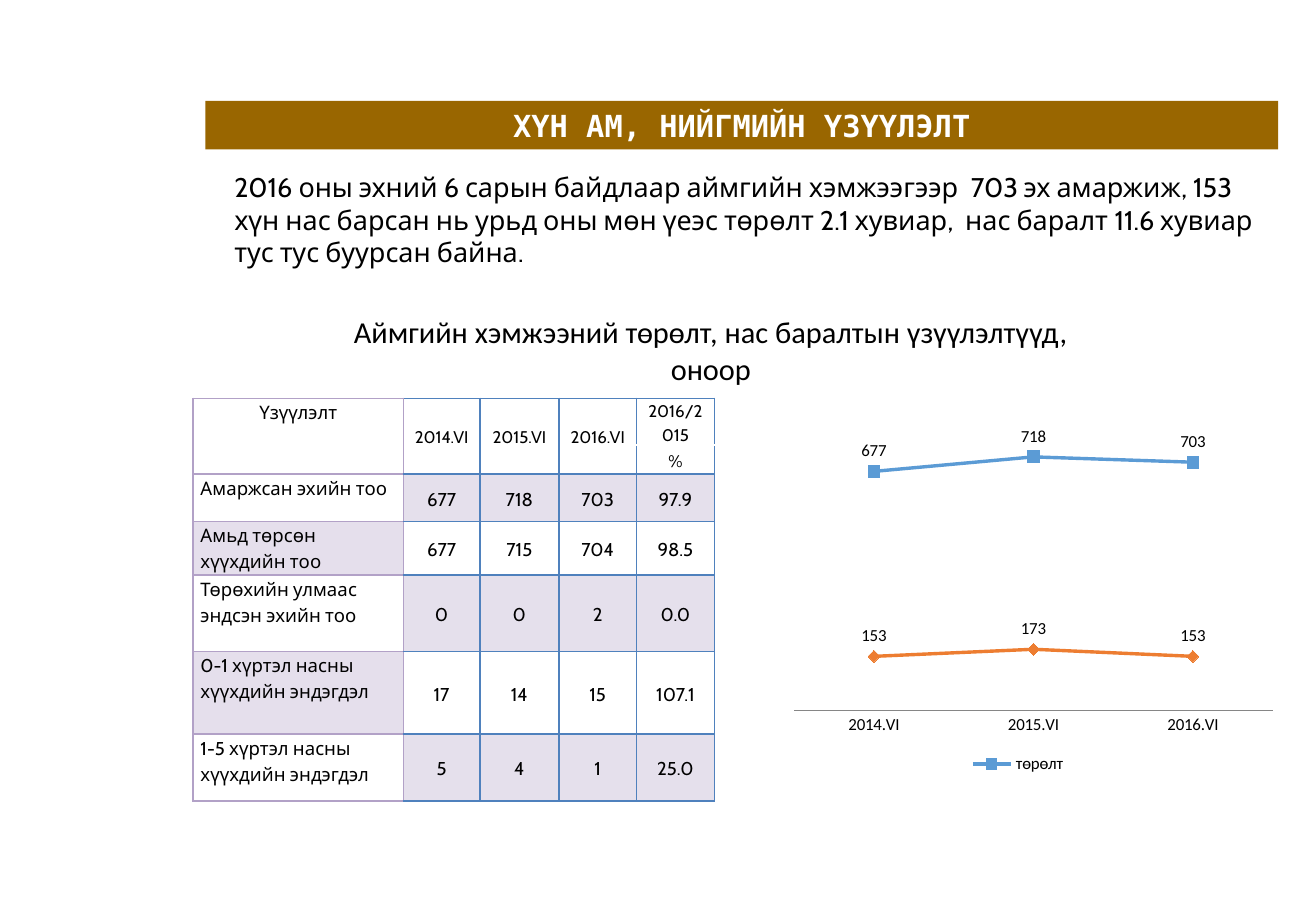
import dataclasses

import lxml.etree
import pptx
import pptx.chart.data
import pptx.dml.color
import pptx.enum.chart
import pptx.enum.text
import pptx.oxml
import pptx.oxml.ns
import pptx.util

Pt = pptx.util.Pt
ALIGN = pptx.enum.text.PP_ALIGN
ANCHOR = pptx.enum.text.MSO_ANCHOR
MARKER = pptx.enum.chart.XL_MARKER_STYLE
qn = pptx.oxml.ns.qn

PAGE_WIDTH = pptx.util.Inches(10.83)
PAGE_HEIGHT = pptx.util.Inches(7.5)
COLOURS = {
    "banner": "996600", "white": "FFFFFF", "text": "000000",
    "blue rule": "4F81BD", "purple rule": "B2A1C7",
    "label band": "E5DFEC", "value band": "E5E0EC",
    "births": "5B9BD5", "deaths": "ED7D31", "axis": "868686",
}


@dataclasses.dataclass(frozen=True)
class Area:
    """A rectangle in percent of the slide's width and height."""
    left: float
    top: float
    width: float
    height: float

    def frame(self) -> tuple:
        return (across(self.left), down(self.top), across(self.width), down(self.height))


@dataclasses.dataclass(frozen=True)
class Style:
    size: float
    font: str = "Cabin"
    colour: str = "text"
    bold: bool = False
    align: ALIGN = ALIGN.LEFT
    spacing: float = 1.0


@dataclasses.dataclass(frozen=True)
class Trend:
    name: str
    values: tuple
    colour: str
    marker: MARKER
    marker_size: int


TITLE_AREA = Area(15.6, 11.07, 81.53, 5.33)
SUMMARY_AREA = Area(16.9, 18, 80.15, 12.13)
CAPTION_AREA = Area(25.95, 33.73, 56.14, 9.47)
TABLE_AREA = Area(14.68, 43.73, 39.61, 44)
CHART_AREA = Area(59.19, 44.4, 38.69, 43.07)

TITLE = "ХҮН АМ, НИЙГМИЙН ҮЗҮҮЛЭЛТ"
SUMMARY = ("2016 оны эхний 6 сарын байдлаар аймгийн хэмжээгээр  703 эх амаржиж, 153 хүн нас "
           "барсан нь урьд оны мөн үеэс төрөлт 2.1 хувиар,  нас баралт 11.6 хувиар "
           "тус тус буурсан байна.")
CAPTION = "Аймгийн хэмжээний төрөлт, нас баралтын үзүүлэлтүүд, оноор"
PERIODS = ("2014.VI", "2015.VI", "2016.VI")
HEADER_ROWS = 2
TABLE_COLUMNS = (15.97, 5.82, 6, 5.91, 5.91)
TABLE_ROWS = (4.93, 3.2, 5.2, 5.87, 8.4, 9.07, 7.33)
TABLE_CELLS = (
    ("Үзүүлэлт", *PERIODS, "2016/2015"),
    ("", "", "", "", "%"),
    ("Амаржсан эхийн тоо", "677", "718", "703", "97.9"),
    ("Амьд төрсөн хүүхдийн тоо", "677", "715", "704", "98.5"),
    ("Төрөхийн улмаас эндсэн эхийн тоо", "0", "0", "2", "0.0"),
    ("0-1 хүртэл насны хүүхдийн эндэгдэл", "17", "14", "15", "107.1"),
    ("1-5 хүртэл насны хүүхдийн эндэгдэл", "5", "4", "1", "25.0"),
)
TRENDS = (
    Trend("төрөлт", (677, 718, 703), "births", MARKER.SQUARE, 7),
    Trend("нас баралт", (153, 173, 153), "deaths", MARKER.DIAMOND, 7),
)


def across(percent: float) -> int:
    return round(PAGE_WIDTH * percent / 100)


def down(percent: float) -> int:
    return round(PAGE_HEIGHT * percent / 100)


def apply(target, **values) -> None:
    for name, value in values.items():
        setattr(target, name, value)


def colour(name: str) -> pptx.dml.color.RGBColor:
    return pptx.dml.color.RGBColor.from_string(COLOURS[name])


def paint(fill, name: str) -> None:
    fill.solid()
    fill.fore_color.rgb = colour(name)


def write(frame, text: str, style: Style) -> None:
    para = frame.paragraphs[0]
    apply(para, alignment=style.align, line_spacing=style.spacing)
    span = para.add_run()
    span.text = text
    apply(span.font, size=Pt(style.size), name=style.font, bold=style.bold)
    span.font.color.rgb = colour(style.colour)


def add_title(page) -> None:
    banner = page.shapes.title
    left, top, width, height = TITLE_AREA.frame()
    apply(banner, left=left, top=top, width=width, height=height)
    paint(banner.fill, "banner")
    apply(banner.text_frame, word_wrap=True, vertical_anchor=ANCHOR.MIDDLE,
          auto_size=pptx.enum.text.MSO_AUTO_SIZE.NONE)
    write(banner.text_frame, TITLE, Style(18, "DejaVu Sans Mono", "white", True, ALIGN.CENTER))


def add_text(page, area: Area, text: str, style: Style, anchor: ANCHOR) -> None:
    frame = page.shapes.add_textbox(*area.frame()).text_frame
    apply(frame, word_wrap=True, vertical_anchor=anchor)
    write(frame, text, style)


def rule_cell(cell, row: int, column: int) -> None:
    """Draw the four borders of a table cell."""
    base = "purple rule" if column == 0 else "blue rule"
    last_column = len(TABLE_COLUMNS) - 1
    heavy = 1.5 if column else 1
    borders = {
        "L": ("purple rule" if column == 1 else base, 1),
        "R": (base, 1),
        "T": (base, heavy if row == HEADER_ROWS else 1),
        "B": (base, heavy if row < HEADER_ROWS else 1),
    }
    if column == last_column and row < HEADER_ROWS:
        del borders["B" if row == 0 else "T"]
    properties = cell._tc.get_or_add_tcPr()
    for index, (side, (name, width)) in enumerate(borders.items()):
        line = lxml.etree.Element(qn(f"a:ln{side}"), w=str(Pt(width)))
        solid = lxml.etree.SubElement(line, qn("a:solidFill"))
        lxml.etree.SubElement(solid, qn("a:srgbClr"), val=COLOURS[name])
        properties.insert(index, line)


def add_indicator_table(page) -> None:
    table = page.shapes.add_table(len(TABLE_ROWS), len(TABLE_COLUMNS), *TABLE_AREA.frame()).table
    apply(table, first_row=False, horz_banding=False)
    for column, share in zip(table.columns, TABLE_COLUMNS):
        column.width = across(share)
    for row, share in zip(table.rows, TABLE_ROWS):
        row.height = down(share)
    for column in range(len(TABLE_COLUMNS) - 1):
        table.cell(0, column).merge(table.cell(1, column))

    for row, texts in enumerate(TABLE_CELLS):
        for column, text in enumerate(texts):
            cell = table.cell(row, column)
            is_label, is_header = column == 0, row < HEADER_ROWS
            side = pptx.util.Inches(0.06 if is_label else 0.07)
            apply(cell, margin_left=side, margin_right=side, margin_top=0, margin_bottom=0,
                  vertical_anchor=ANCHOR.TOP if is_label else ANCHOR.MIDDLE)
            banded = not is_header and (row + is_label) % 2 == 0
            band = "label band" if is_label else "value band"
            paint(cell.fill, band if banded else "white")
            rule_cell(cell, row, column)
            if text:
                size = 10 if is_header and not is_label else 11
                align = ALIGN.LEFT if is_label and not is_header else ALIGN.CENTER
                write(cell.text_frame, text, Style(size, align=align, spacing=1.15))


def place_part(part, before: str, **values) -> None:
    """Give a chart part a manual layout, ahead of its child named before."""
    for old in part.findall(qn("c:layout")):
        part.remove(old)
    layout = lxml.etree.Element(qn("c:layout"))
    manual = lxml.etree.SubElement(layout, qn("c:manualLayout"))
    for name, value in values.items():
        lxml.etree.SubElement(manual, qn(f"c:{name}"), val=str(value))
    part.find(qn(before)).addprevious(layout)


def add_trend_chart(page) -> None:
    data = pptx.chart.data.CategoryChartData()
    data.categories = PERIODS
    for trend in TRENDS:
        data.add_series(trend.name, trend.values)
    kind = pptx.enum.chart.XL_CHART_TYPE.LINE_MARKERS
    chart = page.shapes.add_chart(kind, *CHART_AREA.frame(), data).chart
    apply(chart, has_title=False, has_legend=True)
    apply(chart.font, size=Pt(10), name="Calibri")
    chart.font.color.rgb = colour("text")

    apply(chart.value_axis, visible=False, has_major_gridlines=False,
          minimum_scale=0, maximum_scale=800)
    chart.category_axis.major_tick_mark = pptx.enum.chart.XL_TICK_MARK.NONE
    chart.category_axis.format.line.color.rgb = colour("axis")
    for series, trend in zip(chart.plots[0].series, TRENDS):
        series.smooth = False
        series.format.line.width = Pt(2)
        series.format.line.color.rgb = colour(trend.colour)
        apply(series.marker, style=trend.marker, size=trend.marker_size)
        paint(series.marker.format.fill, trend.colour)
        series.marker.format.line.color.rgb = colour(trend.colour)
        apply(series.data_labels, show_value=True,
              position=pptx.enum.chart.XL_LABEL_POSITION.ABOVE)

    plot_area = chart._chartSpace.find(f".//{qn('c:plotArea')}")
    place_part(plot_area, "c:lineChart", layoutTarget="inner", xMode="edge", yMode="edge",
               x=0.03, y=0.06, w=0.94, h=0.72)
    apply(chart.legend, include_in_layout=False,
          position=pptx.enum.chart.XL_LEGEND_POSITION.BOTTOM)
    legend = chart.legend._element
    place_part(legend, "c:overlay", xMode="edge", yMode="edge", x=0.37, y=0.88)
    hidden = lxml.etree.Element(qn("c:legendEntry"))
    lxml.etree.SubElement(hidden, qn("c:idx"), val="1")
    lxml.etree.SubElement(hidden, qn("c:delete"), val="1")
    legend.find(qn("c:layout")).addprevious(hidden)


def main() -> None:
    deck = pptx.Presentation()
    apply(deck, slide_width=PAGE_WIDTH, slide_height=PAGE_HEIGHT)
    page = deck.slides.add_slide(deck.slide_layouts[5])
    add_title(page)
    add_text(page, SUMMARY_AREA, SUMMARY, Style(16), ANCHOR.MIDDLE)
    add_text(page, CAPTION_AREA, CAPTION, Style(18, "Calibri", align=ALIGN.CENTER), ANCHOR.TOP)
    add_indicator_table(page)
    add_trend_chart(page)
    deck.save("out.pptx")


if __name__ == "__main__":
    main()
